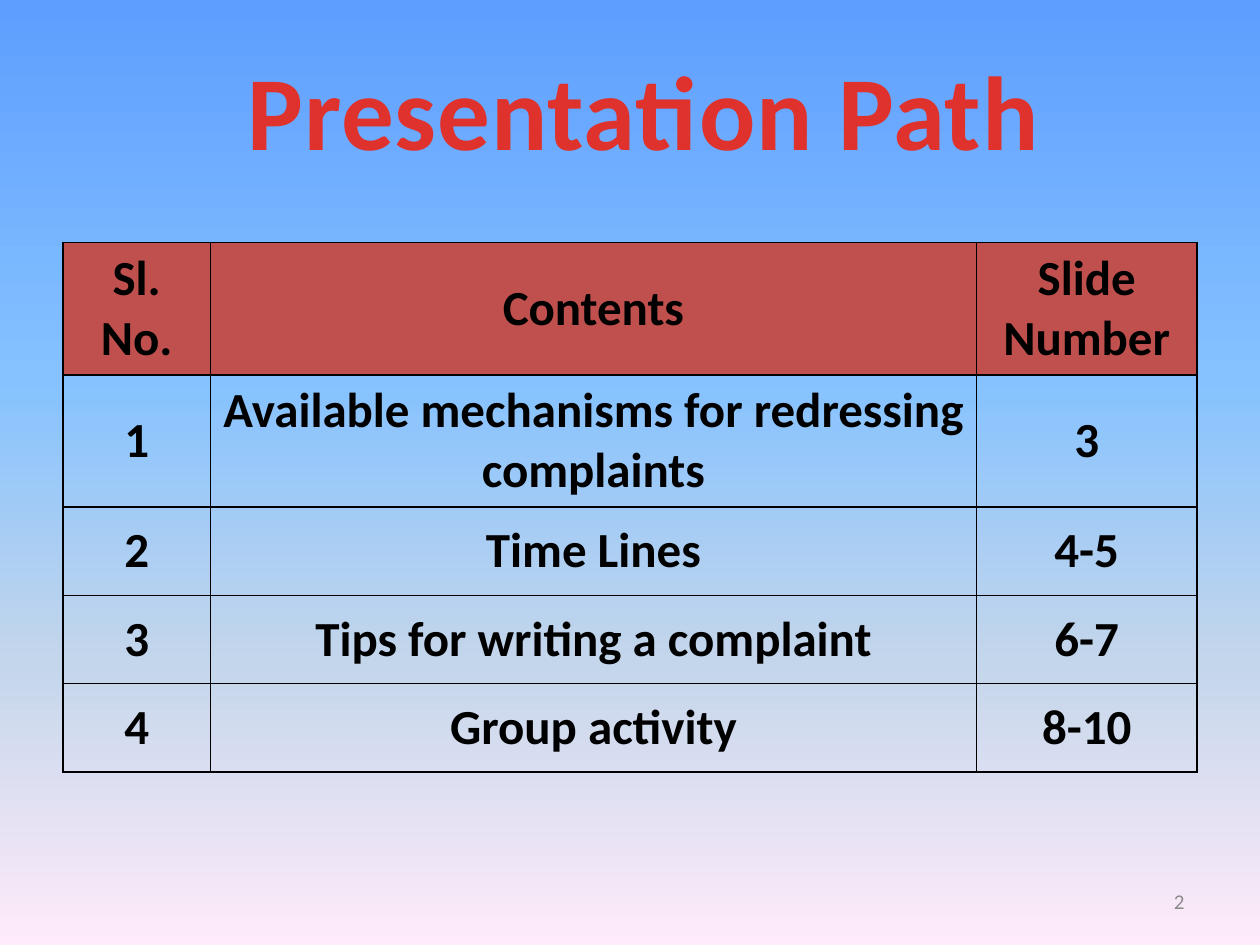
import pptx
import pptx.dml.color
import pptx.enum.text
import pptx.oxml
import pptx.oxml.ns
import pptx.util

Pt = pptx.util.Pt
ALIGN = pptx.enum.text.PP_ALIGN
MIDDLE = pptx.enum.text.MSO_ANCHOR.MIDDLE
SPACE = pptx.oxml.ns.nsdecls("a")

SKY = [(0, "5E9EFF"), (40, "85C2FF"), (70, "C4D6EB"), (100, "FFEBFA")]
ROWS = [
    ("Sl. No.", "Contents", "Slide Number"),
    ("1", "Available mechanisms for redressing complaints", "3"),
    ("2", "Time Lines", "4-5"),
    ("3", "Tips for writing a complaint", "6-7"),
    ("4", "Group activity", "8-10"),
]
WIDTHS = [84.2, 437.8, 126]
HEIGHT = 50.4


def color(code):
    return pptx.dml.color.RGBColor.from_string(code)


def paint_back(slide, stops):
    """Fill the background with a gradient that runs from top to bottom."""
    fill = slide.background.fill
    fill.gradient()
    fill.gradient_angle = 270
    marks = "".join(
        f'<a:gs pos="{place * 1000}"><a:srgbClr val="{code}"/></a:gs>'
        for place, code in stops
    )
    new = pptx.oxml.parse_xml(f"<a:gsLst {SPACE}>{marks}</a:gsLst>")
    old = slide.background._cSld.find(".//" + pptx.oxml.ns.qn("a:gsLst"))
    old.getparent().replace(old, new)


def style(para, size, code, align, bold=True):
    para.alignment = align
    font = para.font
    font.name, font.size, font.bold = "Calibri", Pt(size), bold
    font.color.rgb = color(code)


def add_text(slide, text, box, size, code, align, bold=True, wrap=True):
    frame = slide.shapes.add_textbox(*map(Pt, box)).text_frame
    frame.word_wrap = wrap
    para = frame.paragraphs[0]
    para.text = text
    style(para, size, code, align, bold)
    return frame


def add_edges(cell):
    props = cell._tc.get_or_add_tcPr()
    for spot, side in enumerate("LRTB"):
        props.insert(spot, pptx.oxml.parse_xml(
            f'<a:ln{side} {SPACE} w="{Pt(1)}"><a:solidFill>'
            f'<a:srgbClr val="000000"/></a:solidFill></a:ln{side}>'
        ))


def add_grid(slide, left, top):
    table = slide.shapes.add_table(
        len(ROWS), len(WIDTHS), Pt(left), Pt(top),
        Pt(sum(WIDTHS)), Pt(HEIGHT * len(ROWS)),
    ).table
    for col, width in zip(table.columns, WIDTHS):
        col.width = Pt(width)
    for r, row in enumerate(ROWS):
        table.rows[r].height = Pt(HEIGHT)
        for c, text in enumerate(row):
            cell = table.cell(r, c)
            cell.text = text
            cell.vertical_anchor = MIDDLE
            style(cell.text_frame.paragraphs[0], 28, "000000", ALIGN.CENTER)
            add_edges(cell)
            if r == 0:
                cell.fill.solid()
                cell.fill.fore_color.rgb = color("C0504D")
            else:
                cell.fill.background()


def main():
    deck = pptx.Presentation()
    deck.slide_width, deck.slide_height = Pt(720), Pt(540)
    slide = deck.slides.add_slide(deck.slide_layouts[6])
    paint_back(slide, SKY)
    add_grid(slide, 36, 138.5)
    title = add_text(slide, "Presentation Path", (131.8, 22.3, 471.6, 79.9),
                     60, "E0322D", ALIGN.CENTER, wrap=False)
    title.paragraphs[0].runs[0].font._element.set("spc", "50")
    number = add_text(slide, "2", (516, 500.5, 168, 28.8),
                      12, "8C8C8C", ALIGN.RIGHT, bold=False)
    number.vertical_anchor = MIDDLE
    deck.save("out.pptx")


if __name__ == "__main__":
    main()
